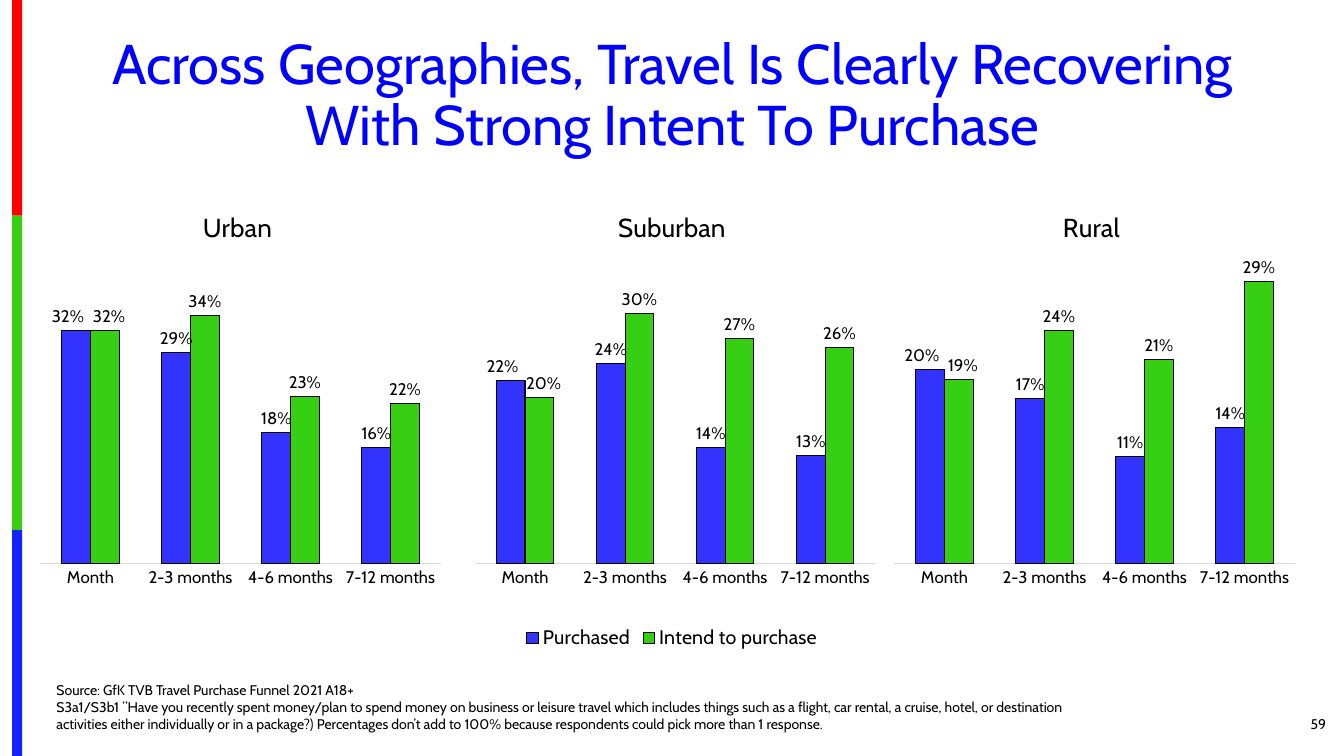
from dataclasses import dataclass

from lxml import etree
from pptx import Presentation
from pptx.chart.data import CategoryChartData
from pptx.dml.color import RGBColor
from pptx.enum.chart import XL_CHART_TYPE, XL_LABEL_POSITION, XL_LEGEND_POSITION, XL_TICK_MARK
from pptx.enum.shapes import MSO_SHAPE
from pptx.enum.text import MSO_ANCHOR, PP_ALIGN
from pptx.oxml import parse_xml
from pptx.oxml.ns import nsdecls, qn
from pptx.util import Inches, Pt

COLUMN = XL_CHART_TYPE.COLUMN_CLUSTERED
OUTSIDE_END = XL_LABEL_POSITION.OUTSIDE_END
LEGEND_BOTTOM = XL_LEGEND_POSITION.BOTTOM
NO_TICK = XL_TICK_MARK.NONE
RECTANGLE = MSO_SHAPE.RECTANGLE
TOP, MIDDLE = MSO_ANCHOR.TOP, MSO_ANCHOR.MIDDLE
LEFT, CENTER, RIGHT = PP_ALIGN.LEFT, PP_ALIGN.CENTER, PP_ALIGN.RIGHT


@dataclass(frozen=True)
class Theme:
    font: str = "Cabin"
    title_blue: str = "0000FF"
    black: str = "000000"
    axis_gray: str = "D9D9D9"
    series: tuple = ("3333FF", "36CF13")
    stripes: tuple = ("FE0000", "36CF12", "1322FE")
    title_size: float = 40
    chart_title_size: float = 18.6
    legend_size: float = 14
    label_size: float = 12
    note_size: float = 10


theme = Theme()


def format_font(font, size, color=theme.black):
    values = {"name": theme.font, "size": Pt(size), "bold": False}
    for name, value in values.items():
        setattr(font, name, value)
    font.color.rgb = RGBColor.from_string(color)


def write_text(shape, box, text, size, color, alignment, anchor, line_spacing):
    for name, value in zip(("left", "top", "width", "height"), box):
        setattr(shape, name, Inches(value))
    frame = shape.text_frame
    frame.word_wrap = True
    frame.vertical_anchor = anchor
    frame.text = text
    paragraph = frame.paragraphs[0]
    properties = paragraph._p.get_or_add_pPr()
    properties.set("marL", "0")
    properties.set("indent", "0")
    etree.SubElement(properties, qn("a:buNone"))
    values = {"alignment": alignment, "line_spacing": line_spacing, "space_before": Pt(0)}
    for name, value in values.items():
        setattr(paragraph, name, value)
    for run in paragraph.runs:
        format_font(run.font, size, color)


presentation = Presentation()
presentation.slide_width = Inches(13.33)
presentation.slide_height = Inches(7.5)
slide = presentation.slides.add_slide(presentation.slide_layouts[1])

stripe_top = 0
for color, height in zip(theme.stripes, (2.14, 3.12, 2.24)):
    stripe = slide.shapes.add_shape(
        RECTANGLE, Inches(0.12), Inches(stripe_top), Inches(0.1), Inches(height))
    stripe.shadow.inherit = False
    stripe.fill.solid()
    stripe.fill.fore_color.rgb = RGBColor.from_string(color)
    stripe.line.fill.background()
    stripe_top += height

title, body = slide.placeholders
write_text(
    title, (0.46, 0.31, 12.42, 1.31),
    "Across Geographies, Travel Is Clearly Recovering With Strong Intent To Purchase",
    theme.title_size, theme.title_blue, CENTER, TOP, 0.9)
write_text(
    body, (0.46, 6.71, 10.3, 0.61),
    "Source: GfK TVB Travel Purchase Funnel 2021 A18+\v"
    "S3a1/S3b1 ”Have you recently spent money/plan to spend money on business or leisure "
    "travel which includes things such as a flight, car rental, a cruise, hotel, or "
    "destination activities either individually or in a package?) Percentages don’t add "
    "to 100% because respondents could pick more than 1 response.",
    theme.note_size, theme.black, LEFT, TOP, 1.0)
page_number = slide.shapes.add_textbox(0, 0, 0, 0)
write_text(page_number, (12.17, 6.98, 1.08, 0.4), "59",
           theme.note_size, theme.black, RIGHT, MIDDLE, 1.0)

periods = ("Month", "2-3 months", "4-6 months", "7-12 months")
geographies = (
    ("Urban", 0.29, 0.40, (0.32, 0.29, 0.18, 0.16), (0.32, 0.34, 0.23, 0.22)),
    ("Suburban", 4.6, 0.35, (0.22, 0.24, 0.14, 0.13), (0.2, 0.3, 0.27, 0.26)),
    ("Rural", 8.76, 0.30, (0.2, 0.17, 0.11, 0.14), (0.19, 0.24, 0.21, 0.29)),
)
month_label_shifts = (-0.02, 0.01)
plot_layout = (
    f'<c:layout {nsdecls("c")}><c:manualLayout><c:layoutTarget val="inner"/>'
    '<c:xMode val="edge"/><c:yMode val="edge"/><c:x val="0.027"/><c:y val="0.178"/>'
    '<c:w val="0.961"/><c:h val="0.628"/></c:manualLayout></c:layout>')

for geography, left, maximum, purchased, intended in geographies:
    chart_data = CategoryChartData(number_format="0%")
    chart_data.categories = periods
    chart_data.add_series("Purchased", purchased)
    chart_data.add_series("Intend to purchase", intended)
    chart = slide.shapes.add_chart(
        COLUMN, Inches(left), Inches(1.88), Inches(4.13), Inches(4.61), chart_data).chart
    format_font(chart.font, theme.note_size)

    chart.has_title = True
    chart.chart_title.text_frame.text = geography
    format_font(chart.chart_title.text_frame.paragraphs[0].runs[0].font,
                theme.chart_title_size)

    chart.has_legend = geography == "Suburban"
    if chart.has_legend:
        chart.legend.position = LEGEND_BOTTOM
        chart.legend.include_in_layout = False
        format_font(chart.legend.font, theme.legend_size)

    category_axis = chart.category_axis
    category_axis.major_tick_mark = NO_TICK
    category_axis.format.line.color.rgb = RGBColor.from_string(theme.axis_gray)
    category_axis.format.line.width = Pt(0.75)
    format_font(category_axis.tick_labels.font, theme.label_size)
    value_axis = chart.value_axis
    axis_values = {"visible": False, "has_major_gridlines": False,
                   "minimum_scale": 0, "maximum_scale": maximum}
    for name, value in axis_values.items():
        setattr(value_axis, name, value)

    plot = chart.plots[0]
    plot.vary_by_categories = False
    plot.gap_width = 150
    plot.overlap = 0
    for series, color, shift in zip(plot.series, theme.series, month_label_shifts):
        series.format.fill.solid()
        series.format.fill.fore_color.rgb = RGBColor.from_string(color)
        series.format.line.color.rgb = RGBColor.from_string(theme.black)
        series.format.line.width = Pt(0.75)
        label_values = {"show_value": True, "position": OUTSIDE_END,
                        "number_format": "0%", "number_format_is_linked": False}
        for name, value in label_values.items():
            setattr(series.data_labels, name, value)
        format_font(series.data_labels.font, theme.label_size)

        month_label = series.points[0].data_label
        month_label.position = OUTSIDE_END
        format_font(month_label.font, theme.label_size)
        month_element = series.data_labels._element.find(qn("c:dLbl"))
        month_element.insert(1, parse_xml(
            f'<c:layout {nsdecls("c")}><c:manualLayout><c:x val="{shift}"/>'
            '<c:y val="0"/></c:manualLayout></c:layout>'))

    plot_area = chart._chartSpace.chart.plotArea
    for layout in plot_area.findall(qn("c:layout")):
        plot_area.remove(layout)
    plot_area.insert(0, parse_xml(plot_layout))

presentation.save("out.pptx")
